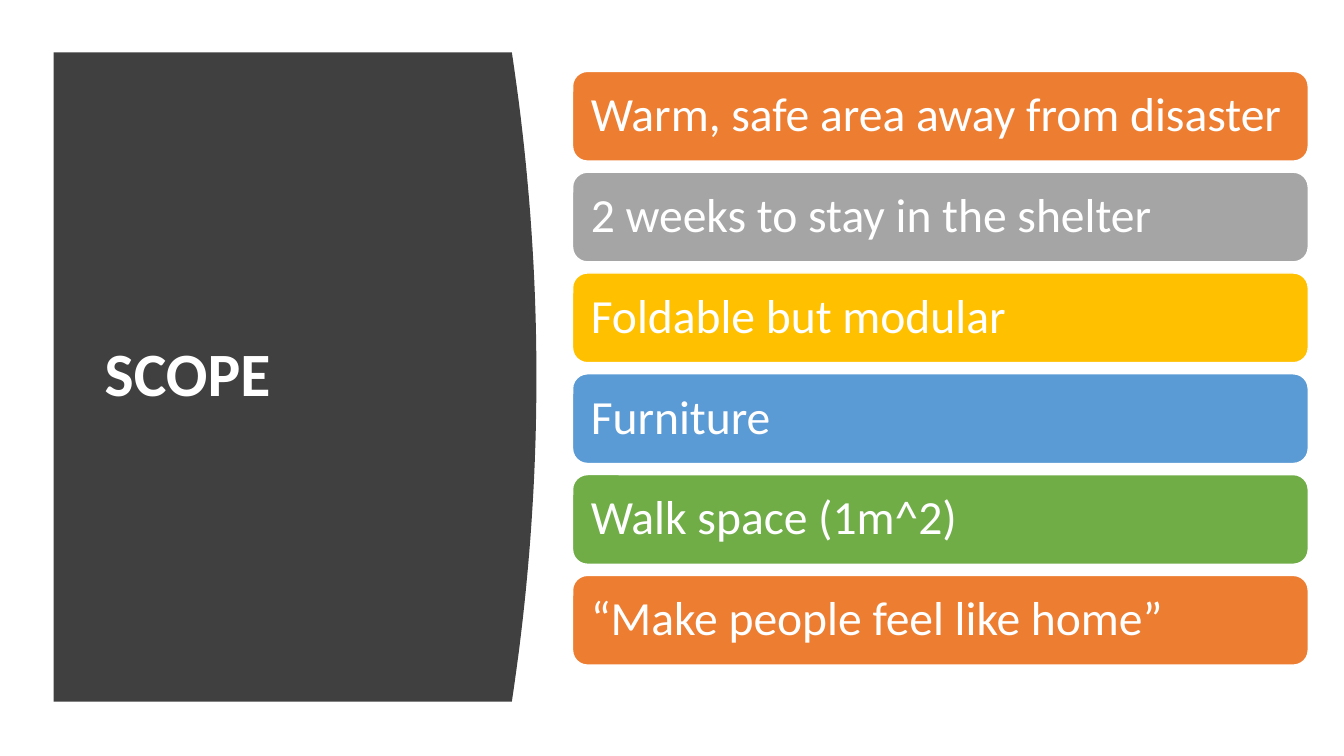
from dataclasses import dataclass

from pptx import Presentation
from pptx.dml.color import RGBColor
from pptx.enum import shapes, text
from pptx.shapes.autoshape import Shape
from pptx.slide import Slide
from pptx.util import Cm, Pt

WHITE = RGBColor(0xFF, 0xFF, 0xFF)
CHARCOAL = RGBColor(0x40, 0x40, 0x40)
ORANGE = RGBColor(0xED, 0x7D, 0x31)
GRAY = RGBColor(0xA5, 0xA5, 0xA5)
GOLD = RGBColor(0xFF, 0xC0, 0x00)
BLUE = RGBColor(0x5B, 0x9B, 0xD5)
GREEN = RGBColor(0x70, 0xAD, 0x47)

PANEL_LEFT, PANEL_TOP, PANEL_HEIGHT = 1.35, 1.32, 16.36
PANEL_EDGE, PANEL_BULGE, CURVE_STEPS = 12.9, 0.62, 40
BAR_LEFT, BAR_TOP, BAR_WIDTH, BAR_HEIGHT, BAR_PITCH = 14.43, 1.8, 18.54, 2.26, 2.54


@dataclass(frozen=True)
class ScopeItem:
    label: str
    color: RGBColor


SCOPE_ITEMS = [
    ScopeItem("Warm, safe area away from disaster", ORANGE),
    ScopeItem("2 weeks to stay in the shelter", GRAY),
    ScopeItem("Foldable but modular", GOLD),
    ScopeItem("Furniture", BLUE),
    ScopeItem("Walk space (1m^2)", GREEN),
    ScopeItem("“Make people feel like home”", ORANGE),
]


def write_text(shape: Shape, content: str, size: int, bold: bool = False) -> None:
    frame = shape.text_frame
    frame.word_wrap = True
    frame.vertical_anchor = text.MSO_ANCHOR.MIDDLE
    paragraph = frame.paragraphs[0]
    paragraph.text = content
    paragraph.alignment = text.PP_ALIGN.LEFT
    paragraph.line_spacing = 0.9
    paragraph.font.name = "Calibri"
    paragraph.font.size = Pt(size)
    paragraph.font.bold = bold
    paragraph.font.color.rgb = WHITE


def fill_shape(shape: Shape, color: RGBColor) -> None:
    shape.shadow.inherit = False
    shape.fill.solid()
    shape.fill.fore_color.rgb = color


def draw_panel(slide: Slide) -> None:
    curve = []
    for step in range(CURVE_STEPS + 1):
        progress = step / CURVE_STEPS
        x = PANEL_EDGE + PANEL_BULGE * (1 - (2 * progress - 1) ** 2)
        curve.append((Cm(x), Cm(PANEL_TOP + PANEL_HEIGHT * progress)))
    builder = slide.shapes.build_freeform(Cm(PANEL_LEFT), Cm(PANEL_TOP))
    builder.add_line_segments(curve + [(Cm(PANEL_LEFT), Cm(PANEL_TOP + PANEL_HEIGHT))])
    panel = builder.convert_to_shape()
    fill_shape(panel, CHARCOAL)
    panel.line.fill.background()


def draw_title(slide: Slide) -> None:
    title = slide.shapes.add_textbox(Cm(2.39), Cm(2.82), Cm(9.5), Cm(13.34))
    write_text(title, "SCOPE", 44, bold=True)


def draw_bar(slide: Slide, item: ScopeItem, top: float) -> None:
    bar = slide.shapes.add_shape(
        shapes.MSO_SHAPE.ROUNDED_RECTANGLE,
        Cm(BAR_LEFT), Cm(top), Cm(BAR_WIDTH), Cm(BAR_HEIGHT),
    )
    fill_shape(bar, item.color)
    bar.line.color.rgb = WHITE
    bar.line.width = Pt(1)
    bar.text_frame.margin_left = bar.text_frame.margin_right = Cm(0.35)
    write_text(bar, item.label, 34)


def main() -> None:
    presentation = Presentation()
    presentation.slide_width = Cm(33.87)
    presentation.slide_height = Cm(19.05)
    slide = presentation.slides.add_slide(presentation.slide_layouts[6])
    draw_panel(slide)
    draw_title(slide)
    for index, item in enumerate(SCOPE_ITEMS):
        draw_bar(slide, item, BAR_TOP + index * BAR_PITCH)
    presentation.save("out.pptx")


if __name__ == "__main__":
    main()
